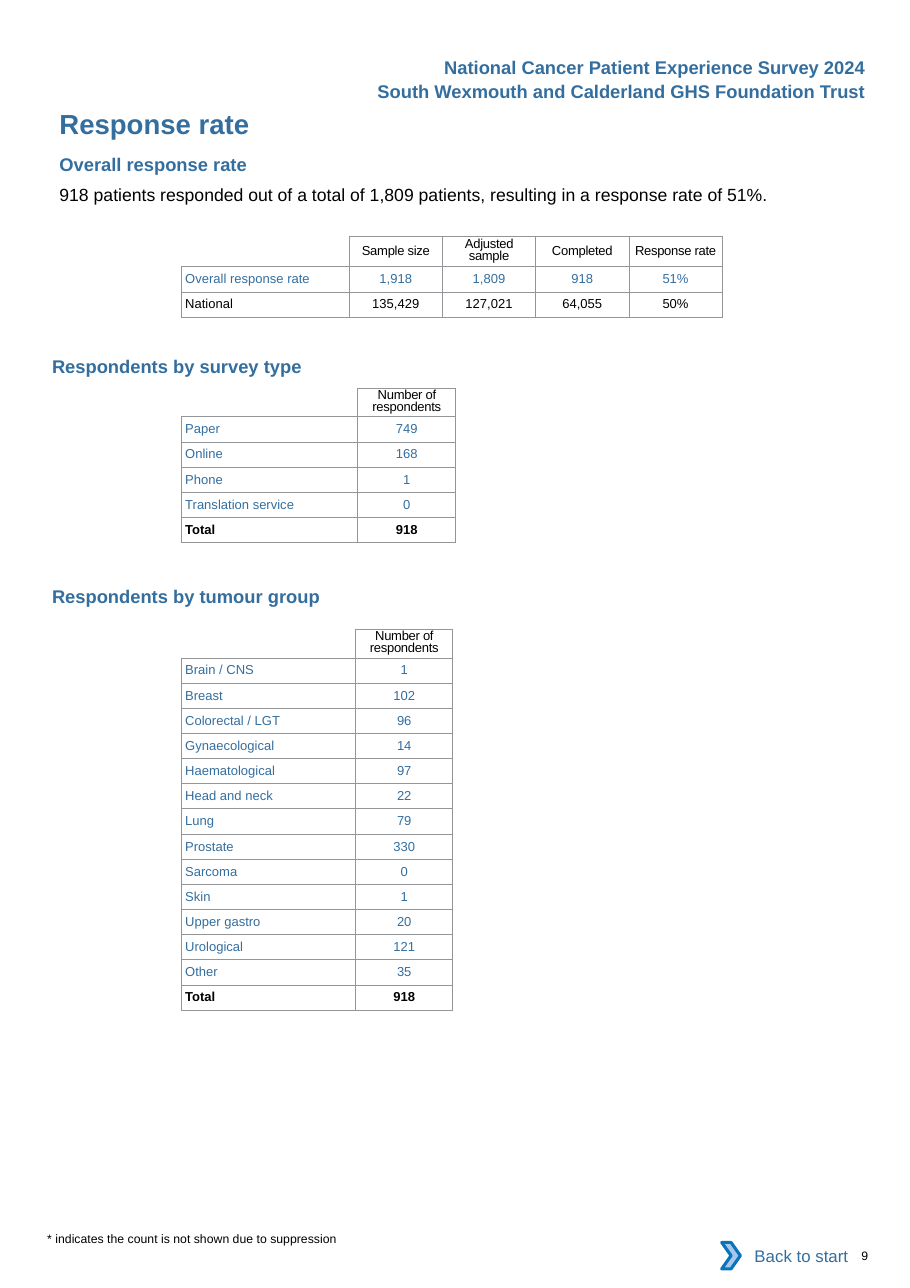
from dataclasses import dataclass

from lxml import etree
from pptx import Presentation
from pptx.dml.color import RGBColor
from pptx.enum.shapes import MSO_SHAPE
from pptx.enum.text import MSO_ANCHOR, MSO_AUTO_SIZE, PP_ALIGN
from pptx.oxml.ns import qn
from pptx.util import Cm, Pt

LEFT, CENTER, RIGHT = PP_ALIGN.LEFT, PP_ALIGN.CENTER, PP_ALIGN.RIGHT
TOP, MIDDLE = MSO_ANCHOR.TOP, MSO_ANCHOR.MIDDLE
NO_AUTOSIZE = MSO_AUTO_SIZE.NONE
RECTANGLE, CHEVRON = MSO_SHAPE.RECTANGLE, MSO_SHAPE.CHEVRON


@dataclass(frozen=True)
class Theme:
    font: str = "Arial"
    blue: str = "336E9F"
    black: str = "000000"
    white: str = "FFFFFF"
    border: str = "939598"
    chevron_fill: str = "A8C7E9"
    chevron_line: str = "0A74BB"
    title: float = 18
    heading: float = 12
    body: float = 11.5
    link: float = 11
    cell: float = 8.5
    note: float = 8
    header_leading: float = 7.6


T = Theme()

TITLE = ("Response rate", (1.37, 2.46, 10.49, 0.76))
BANNER = [
    ("National Cancer Patient Experience Survey 2024", 1.3),
    ("South Wexmouth and Calderland GHS Foundation Trust", 1.86),
]
HEADINGS = [
    ("Overall response rate", (1.37, 3.53, 10.49, 0.51)),
    ("Respondents by survey type", (1.2, 8.2, 6.2, 0.51)),
    ("Respondents by tumour group", (1.2, 13.49, 6.6, 0.51)),
]
SUMMARY = (
    "918 patients responded out of a total of 1,809 patients, "
    "resulting in a response rate of 51%.",
    (1.37, 4.24, 18.29, 0.48),
)
NOTES = [
    ("* indicates the count is not shown due to suppression", (1.09, 28.4, 7, 0.33)),
    ("9", (19.86, 28.78, 0.8, 0.33)),
]
BACK_LINK = ("Back to start", (16.81, 28.42, 3, 1.07))
BACK_ARROW = (16.64, 28.65, 0.43, 0.61)

RESPONSE_ROWS = [
    ("", "Sample size", "Adjusted sample", "Completed", "Response rate"),
    ("Overall response rate", "1,918", "1,809", "918", "51%"),
    ("National", "135,429", "127,021", "64,055", "50%"),
]
SURVEY_TYPE_ROWS = [
    ("", "Number of respondents"),
    ("Paper", "749"),
    ("Online", "168"),
    ("Phone", "1"),
    ("Translation service", "0"),
    ("Total", "918"),
]
TUMOUR_GROUP_ROWS = [
    ("", "Number of respondents"),
    ("Brain / CNS", "1"),
    ("Breast", "102"),
    ("Colorectal / LGT", "96"),
    ("Gynaecological", "14"),
    ("Haematological", "97"),
    ("Head and neck", "22"),
    ("Lung", "79"),
    ("Prostate", "330"),
    ("Sarcoma", "0"),
    ("Skin", "1"),
    ("Upper gastro", "20"),
    ("Urological", "121"),
    ("Other", "35"),
    ("Total", "918"),
]
TABLES = [
    (RESPONSE_ROWS, 5.44, 3.86, 2.15, 0.71),
    (SURVEY_TYPE_ROWS, 8.95, 4.06, 2.26, 0.66),
    (TUMOUR_GROUP_ROWS, 14.51, 4.01, 2.24, 0.66),
]
TABLE_LEFT, ROW_HEIGHT = 4.19, 0.58
WRAPPED_HEADERS = {"Adjusted sample", "Number of respondents"}
BLACK_ROWS = {"National", "Total"}


def rgb(value):
    return RGBColor.from_string(value)


def style(p, size, color=T.black, bold=False, align=LEFT):
    p.alignment = align
    p.font.name = T.font
    p.font.size = Pt(size)
    p.font.bold = bold
    p.font.color.rgb = rgb(color)


def fill_text(sp, text, size, color=T.black, bold=False, align=LEFT):
    tf = sp.text_frame
    tf.word_wrap = True
    tf.auto_size = NO_AUTOSIZE
    tf.vertical_anchor = TOP
    tf.margin_left = tf.margin_right = tf.margin_top = tf.margin_bottom = 0
    tf.text = text
    style(tf.paragraphs[0], size, color, bold, align)


def add_text(s, text, box, *look):
    fill_text(s.shapes.add_textbox(*map(Cm, box)), text, *look)


def set_borders(cell, hidden):
    tc_pr = cell._tc.get_or_add_tcPr()
    for i, side in enumerate(("lnL", "lnR", "lnT", "lnB")):
        ln = etree.Element(qn(f"a:{side}"), w=str(Pt(0.5)))
        if side in hidden:
            etree.SubElement(ln, qn("a:noFill"))
        else:
            solid = etree.SubElement(ln, qn("a:solidFill"))
            etree.SubElement(solid, qn("a:srgbClr"), val=T.border)
        tc_pr.insert(i, ln)


def fill_cell(cell, text, label, is_header, is_first):
    cell.margin_left = cell.margin_right = cell.margin_top = cell.margin_bottom = 0
    cell.vertical_anchor = MIDDLE
    cell.fill.background()
    cell.text = text
    p = cell.text_frame.paragraphs[0]
    color = T.black if is_header or label in BLACK_ROWS else T.blue
    style(p, T.cell, color, label == "Total", LEFT if is_first else CENTER)
    if is_first:
        cell.margin_left = Cm(0.08)
    if is_header:
        p.font._rPr.set("spc", "-20")
    if text in WRAPPED_HEADERS:
        cell.margin_left = cell.margin_right = Cm(0.25)
        p.line_spacing = Pt(T.header_leading)
    if not text:
        etree.SubElement(p._p, qn("a:endParaRPr"), sz=str(int(T.cell * 100)))
    set_borders(cell, () if text else ("lnL", "lnT"))


def add_data_table(s, rows, top, label_width, value_width, header_height):
    widths = [label_width] + [value_width] * (len(rows[0]) - 1)
    heights = [header_height] + [ROW_HEIGHT] * (len(rows) - 1)
    table = s.shapes.add_table(
        len(rows), len(widths), Cm(TABLE_LEFT), Cm(top), Cm(sum(widths)), Cm(sum(heights))
    ).table
    table.first_row = table.horz_banding = False
    for column, width in zip(table.columns, widths):
        column.width = Cm(width)
    for i, (row, height) in enumerate(zip(rows, heights)):
        table.rows[i].height = Cm(height)
        for j, text in enumerate(row):
            fill_cell(table.cell(i, j), text, row[0], i == 0, j == 0)


def add_back_link(s):
    group = s.shapes.add_group_shape()
    text, box = BACK_LINK
    link = group.shapes.add_shape(RECTANGLE, *map(Cm, box))
    fill_text(link, text, T.link, T.blue, False, RIGHT)
    link.text_frame.vertical_anchor = MIDDLE
    link.text_frame.margin_right = Cm(0.25)
    link.line.fill.background()
    arrow = group.shapes.add_shape(CHEVRON, *map(Cm, BACK_ARROW))
    arrow.line.color.rgb = rgb(T.chevron_line)
    arrow.line.width = Pt(2)
    for sp, color in ((link, T.white), (arrow, T.chevron_fill)):
        sp.shadow.inherit = False
        sp.fill.solid()
        sp.fill.fore_color.rgb = rgb(color)


def main():
    prs = Presentation()
    prs.slide_width, prs.slide_height = Cm(20.98), Cm(29.7)
    s = prs.slides.add_slide(prs.slide_layouts[5])

    text, box = TITLE
    title = s.shapes.title
    title.left, title.top, title.width, title.height = map(Cm, box)
    fill_text(title, text, T.title, T.blue, True)

    for text, top in BANNER:
        add_text(s, text, (8.48, top, 11.48, 0.51), T.heading, T.blue, True, RIGHT)
    for text, box in HEADINGS:
        add_text(s, text, box, T.heading, T.blue, True)
    add_text(s, *SUMMARY, T.body)
    for table in TABLES:
        add_data_table(s, *table)
    for text, box in NOTES:
        add_text(s, text, box, T.note)
    add_back_link(s)
    prs.save("out.pptx")


if __name__ == "__main__":
    main()
